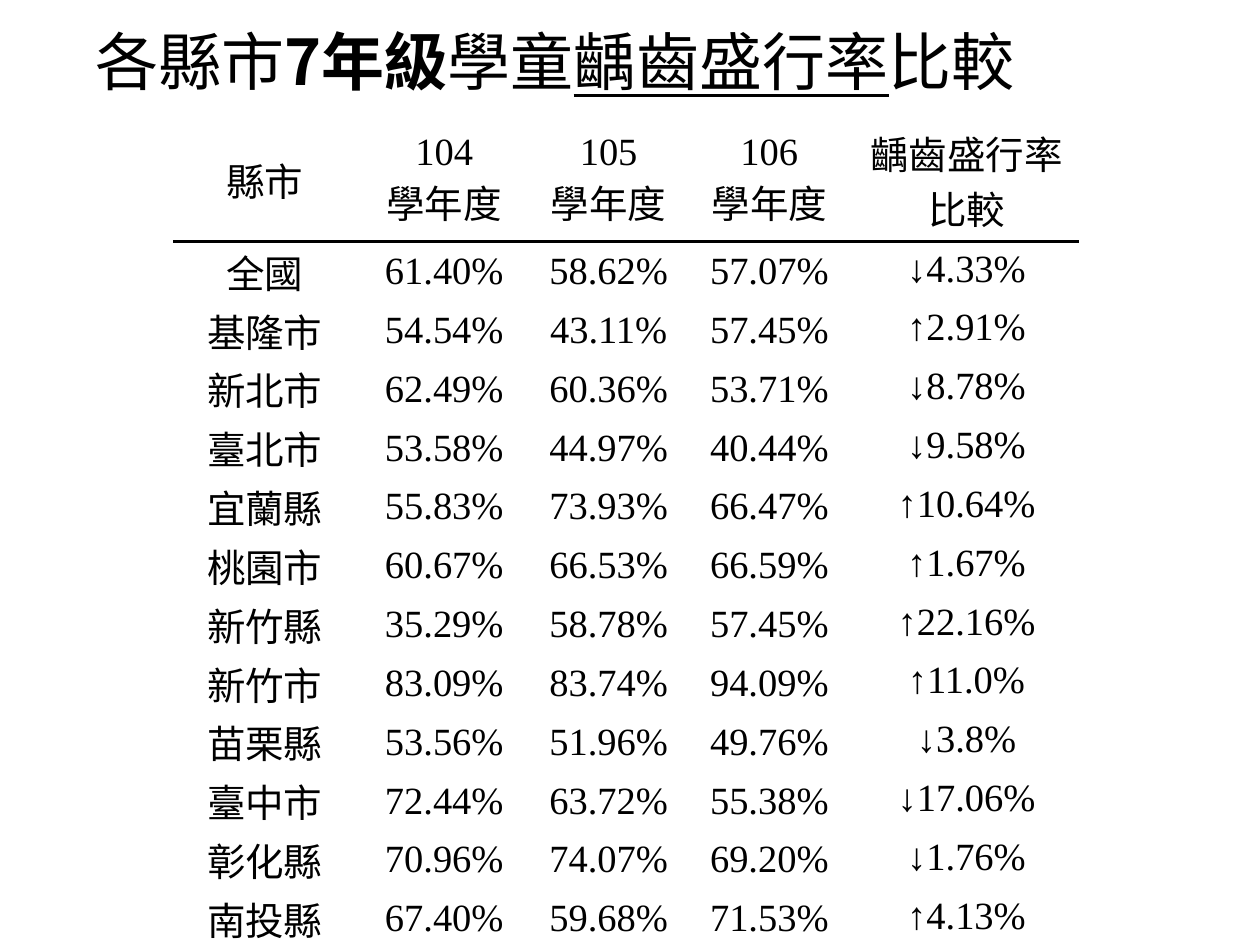
from dataclasses import dataclass

from lxml.etree import SubElement
from pptx import Presentation
from pptx.dml.color import RGBColor
from pptx.enum.text import MSO_ANCHOR, PP_ALIGN
from pptx.oxml import parse_xml
from pptx.oxml.ns import nsdecls, qn
from pptx.util import Pt

COLORS = {"text": "000000", "fill": "FFFFFF"}
CJK_FONT = "Noto Sans CJK SC"
TABLE_FONT = "Times New Roman"
COL_WIDTHS = (103.7, 101.5, 86.4, 97.2, 128.2)
HEADER_HEIGHT, ROW_HEIGHT = 70.4, 33.4
HEADERS = ("縣市", "104\n學年度", "105\n學年度", "106\n學年度", "齲齒盛行率\n比較")


@dataclass
class TitlePart:
    text: str
    bold: bool = False
    underline: bool = False


@dataclass
class CountyRow:
    county: str
    y104: str
    y105: str
    y106: str
    change: str

    def values(self) -> tuple:
        return self.county, self.y104, self.y105, self.y106, self.change


TITLE = (
    TitlePart("各縣市"),
    TitlePart("7年級", bold=True),
    TitlePart("學童"),
    TitlePart("齲齒盛行率", underline=True),
    TitlePart("比較"),
)
COUNTIES = (
    CountyRow("全國", "61.40%", "58.62%", "57.07%", "↓4.33%"),
    CountyRow("基隆市", "54.54%", "43.11%", "57.45%", "↑2.91%"),
    CountyRow("新北市", "62.49%", "60.36%", "53.71%", "↓8.78%"),
    CountyRow("臺北市", "53.58%", "44.97%", "40.44%", "↓9.58%"),
    CountyRow("宜蘭縣", "55.83%", "73.93%", "66.47%", "↑10.64%"),
    CountyRow("桃園市", "60.67%", "66.53%", "66.59%", "↑1.67%"),
    CountyRow("新竹縣", "35.29%", "58.78%", "57.45%", "↑22.16%"),
    CountyRow("新竹市", "83.09%", "83.74%", "94.09%", "↑11.0%"),
    CountyRow("苗栗縣", "53.56%", "51.96%", "49.76%", "↓3.8%"),
    CountyRow("臺中市", "72.44%", "63.72%", "55.38%", "↓17.06%"),
    CountyRow("彰化縣", "70.96%", "74.07%", "69.20%", "↓1.76%"),
    CountyRow("南投縣", "67.40%", "59.68%", "71.53%", "↑4.13%"),
)


def add_run(p, text: str, size: float, font: str, bold: bool = False, underline: bool = False) -> None:
    """Add one run with its Latin and East Asian fonts."""
    r = p.add_run()
    r.text = text
    r.font.size = Pt(size)
    r.font.bold = bold
    r.font.underline = underline
    r.font.color.rgb = RGBColor.from_string(COLORS["text"])
    r.font.name = font
    SubElement(r.font._element, qn("a:ea")).set("typeface", CJK_FONT)


def add_title(s) -> None:
    """Add the slide title."""
    sp = s.shapes.add_textbox(Pt(47.5), Pt(0), Pt(620.6), Pt(74.9))
    tf = sp.text_frame
    tf.word_wrap = True
    tf.vertical_anchor = MSO_ANCHOR.MIDDLE
    p = tf.paragraphs[0]
    p.line_spacing = 0.9
    for part in TITLE:
        add_run(p, part.text, 36, CJK_FONT, part.bold, part.underline)


def add_bottom_rule(cell) -> None:
    """Draw a black rule under a cell."""
    ln = parse_xml(
        f'<a:lnB {nsdecls("a")} w="{Pt(1.5)}"><a:solidFill>'
        f'<a:srgbClr val="{COLORS["text"]}"/></a:solidFill></a:lnB>'
    )
    cell._tc.get_or_add_tcPr().insert(0, ln)


def fill_cell(cell, text: str, tight: bool, middle: bool) -> None:
    """Write centred lines into a cell."""
    cell.fill.solid()
    cell.fill.fore_color.rgb = RGBColor.from_string(COLORS["fill"])
    cell.vertical_anchor = MSO_ANCHOR.MIDDLE if middle else MSO_ANCHOR.TOP
    if tight:
        cell.margin_left = cell.margin_right = cell.margin_top = Pt(0.7)
        cell.margin_bottom = Pt(0)
    tf = cell.text_frame
    for i, line in enumerate(text.split("\n")):
        p = tf.add_paragraph() if i else tf.paragraphs[0]
        p.alignment = PP_ALIGN.CENTER
        add_run(p, line, 22, TABLE_FONT)


def add_county_table(s) -> None:
    """Add the table of rates by county and school year."""
    rows = (HEADERS, *(c.values() for c in COUNTIES))
    last_row, last_col = len(rows) - 1, len(HEADERS) - 1
    height = HEADER_HEIGHT + ROW_HEIGHT * last_row
    sp = s.shapes.add_table(
        len(rows), len(HEADERS), Pt(99.4), Pt(67.7), Pt(sum(COL_WIDTHS)), Pt(height)
    )
    table = sp.table
    table.first_row = table.horz_banding = False
    for col, width in zip(table.columns, COL_WIDTHS):
        col.width = Pt(width)
    for i, values in enumerate(rows):
        table.rows[i].height = Pt(ROW_HEIGHT if i else HEADER_HEIGHT)
        for j, text in enumerate(values):
            cell = table.cell(i, j)
            fill_cell(cell, text, tight=i > 0 and j < last_col, middle=j < last_col)
            if i in (0, last_row):
                add_bottom_rule(cell)


def main() -> None:
    """Build and save the slide."""
    prs = Presentation()
    prs.slide_width, prs.slide_height = Pt(720), Pt(540)
    s = prs.slides.add_slide(prs.slide_layouts[6])
    add_title(s)
    add_county_table(s)
    prs.save("out.pptx")


if __name__ == "__main__":
    main()
